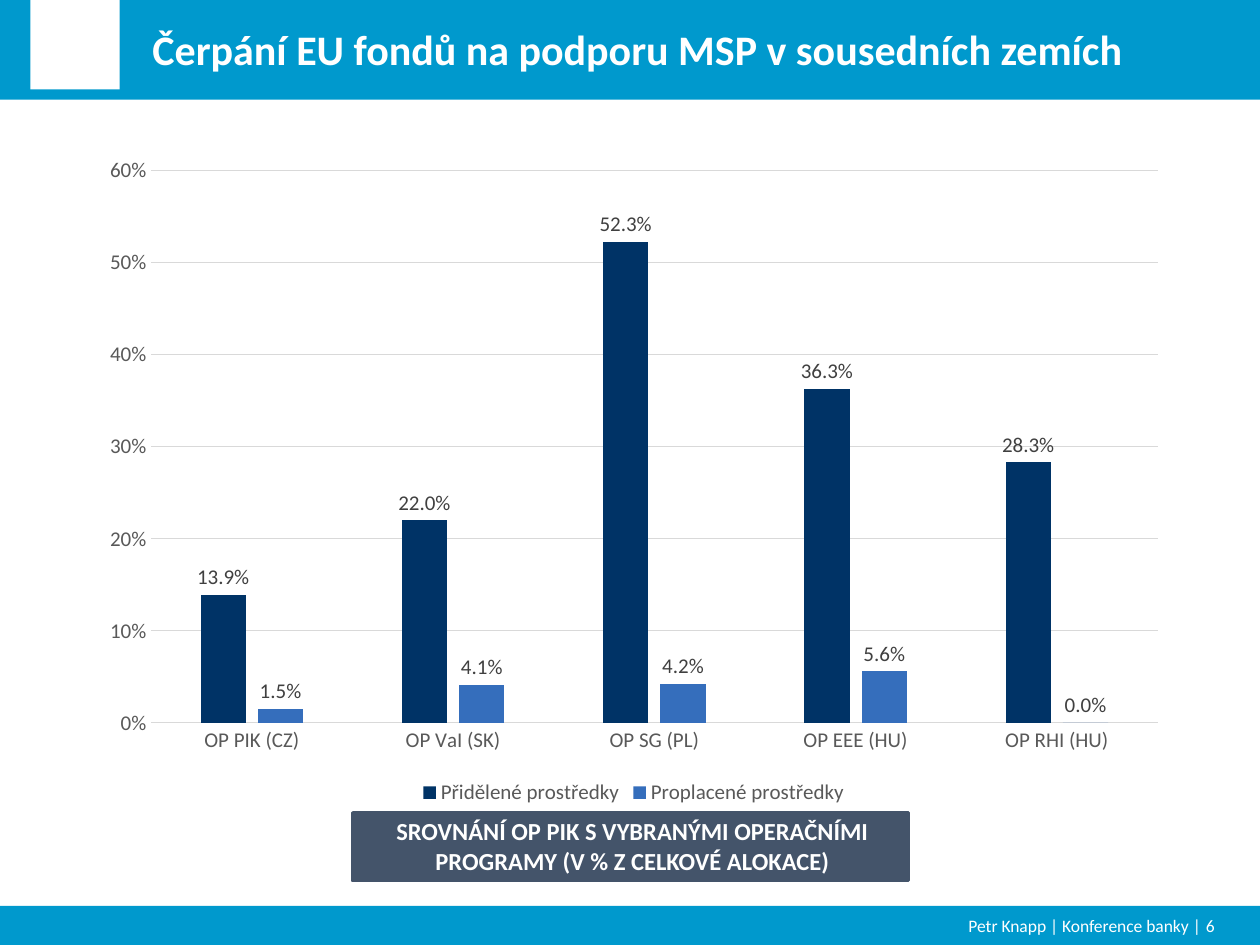
from pptx import Presentation
from pptx.chart.data import CategoryChartData
from pptx.dml.color import RGBColor
from pptx.enum.chart import XL_CHART_TYPE, XL_LABEL_POSITION, XL_LEGEND_POSITION, XL_TICK_MARK
from pptx.enum.shapes import MSO_SHAPE
from pptx.enum.text import MSO_ANCHOR, MSO_AUTO_SIZE, PP_ALIGN
from pptx.util import Inches, Pt

COLUMNS = XL_CHART_TYPE.COLUMN_CLUSTERED
OUTSIDE_END = XL_LABEL_POSITION.OUTSIDE_END
LEGEND_BOTTOM = XL_LEGEND_POSITION.BOTTOM
NO_TICK = XL_TICK_MARK.NONE
RECTANGLE = MSO_SHAPE.RECTANGLE
NO_AUTO_SIZE = MSO_AUTO_SIZE.NONE
TOP, MIDDLE = MSO_ANCHOR.TOP, MSO_ANCHOR.MIDDLE
LEFT, CENTER, RIGHT = PP_ALIGN.LEFT, PP_ALIGN.CENTER, PP_ALIGN.RIGHT

TITLE_ONLY = 5
COLORS = {
    "band": "0099CD", "white": "FFFFFF", "caption": "44546A",
    "allocated": "003366", "paid": "356EBC",
    "axis": "595959", "label": "404040", "grid": "D9D9D9", "black": "000000",
}
TITLE = {"size": Pt(24), "bold": True}
CAPTION = {"size": Pt(14), "bold": True}
FOOTER = {"size": Pt(10), "bold": False}

CATEGORIES = ["OP PIK (CZ)", "OP VaI (SK)", "OP SG (PL)", "OP EEE (HU)", "OP RHI (HU)"]
SERIES = [
    ("Přidělené prostředky", "allocated", [0.139, 0.22, 0.523, 0.363, 0.283]),
    ("Proplacené prostředky", "paid", [0.015, 0.041, 0.042, 0.056, 0]),
]


def rgb(name):
    return RGBColor.from_string(COLORS[name])


def set_font(font, color, **values):
    for name, value in {"name": "Calibri", **values}.items():
        setattr(font, name, value)
    font.color.rgb = rgb(color)


def set_line(line, color, width=0.75):
    line.color.rgb = rgb(color)
    line.width = Pt(width)


def add_rectangle(slide, box, color, outline=None):
    shape = slide.shapes.add_shape(RECTANGLE, *map(Inches, box))
    shape.shadow.inherit = False
    shape.fill.solid()
    shape.fill.fore_color.rgb = rgb(color)
    if outline:
        set_line(shape.line, color, outline)
    else:
        shape.line.fill.background()


def write_text(shape, text, style, alignment=LEFT, anchor=TOP, margins=(0.1, 0.05)):
    """Fill a text shape; margins are (left and right, top and bottom)."""
    horizontal, vertical = map(Inches, margins)
    frame = shape.text_frame
    values = {
        "word_wrap": True, "auto_size": NO_AUTO_SIZE, "vertical_anchor": anchor,
        "margin_left": horizontal, "margin_right": horizontal,
        "margin_top": vertical, "margin_bottom": vertical,
    }
    for name, value in values.items():
        setattr(frame, name, value)
    paragraph = frame.paragraphs[0]
    paragraph.alignment = alignment
    run = paragraph.add_run()
    run.text = text
    set_font(run.font, "white", **style)


def add_text(slide, box, text, style, **layout):
    write_text(slide.shapes.add_textbox(*map(Inches, box)), text, style, **layout)


def add_title(slide, box, text):
    title = slide.shapes.title
    title.left, title.top, title.width, title.height = map(Inches, box)
    write_text(title, text, TITLE)


def format_axes(chart):
    for axis in (chart.category_axis, chart.value_axis):
        axis.major_tick_mark = axis.minor_tick_mark = NO_TICK
        set_font(axis.tick_labels.font, "axis", size=Pt(12))
    set_line(chart.category_axis.format.line, "grid")
    values = chart.value_axis
    values.minimum_scale, values.maximum_scale, values.major_unit = 0, 0.6, 0.1
    values.tick_labels.number_format = "0%"
    values.tick_labels.number_format_is_linked = False
    values.format.line.fill.background()
    set_line(values.major_gridlines.format.line, "grid")


def format_series(series, color):
    series.invert_if_negative = False
    series.format.fill.solid()
    series.format.fill.fore_color.rgb = rgb(color)
    labels = series.data_labels
    labels.show_value = True
    labels.position = OUTSIDE_END
    labels.number_format = "0.0%"
    labels.number_format_is_linked = False
    set_font(labels.font, "label", size=Pt(12))


def add_column_chart(slide, box):
    data = CategoryChartData(number_format="0.0%")
    data.categories = CATEGORIES
    for name, _, values in SERIES:
        data.add_series(name, values)
    chart = slide.shapes.add_chart(COLUMNS, *map(Inches, box), data).chart
    set_font(chart.font, "black", size=Pt(10))
    chart.has_title = False
    chart.has_legend = True
    chart.legend.position = LEGEND_BOTTOM
    chart.legend.include_in_layout = False
    set_font(chart.legend.font, "axis", size=Pt(12))
    format_axes(chart)
    plot = chart.plots[0]
    plot.vary_by_categories = False
    plot.gap_width, plot.overlap = 219, -27
    for series, (_, color, _) in zip(plot.series, SERIES):
        format_series(series, color)


def main():
    presentation = Presentation()
    presentation.slide_width, presentation.slide_height = Inches(10), Inches(7.5)
    slide = presentation.slides.add_slide(presentation.slide_layouts[TITLE_ONLY])

    add_rectangle(slide, (0, 7.19, 10, 0.31), "band")
    add_rectangle(slide, (0, 0, 10, 0.79), "band")
    add_rectangle(slide, (0.24, 0, 0.71, 0.71), "white")

    # The title placeholder comes first in the tree; move it above the header band.
    slide.shapes.element.append(slide.shapes.title.element)
    add_title(slide, (1.11, 0.14, 8.61, 0.5), "Čerpání EU fondů na podporu MSP v sousedních zemích")

    add_rectangle(slide, (2.8, 6.45, 4.41, 0.54), "caption", outline=2)
    add_text(slide, (3.01, 6.43, 4.02, 0.57),
             "SROVNÁNÍ OP PIK S VYBRANÝMI OPERAČNÍMI PROGRAMY (V % Z CELKOVÉ ALOKACE)",
             CAPTION, alignment=CENTER)

    footer = {"anchor": MIDDLE, "margins": (0, 0)}
    add_text(slide, (9.57, 7.19, 0.35, 0.31), "6", FOOTER, **footer)
    add_text(slide, (0.36, 7.19, 9.17, 0.31), "Petr Knapp | Konference banky |", FOOTER,
             alignment=RIGHT, **footer)

    add_column_chart(slide, (0.7, 1.15, 8.66, 5.28))
    presentation.save("out.pptx")


if __name__ == "__main__":
    main()
